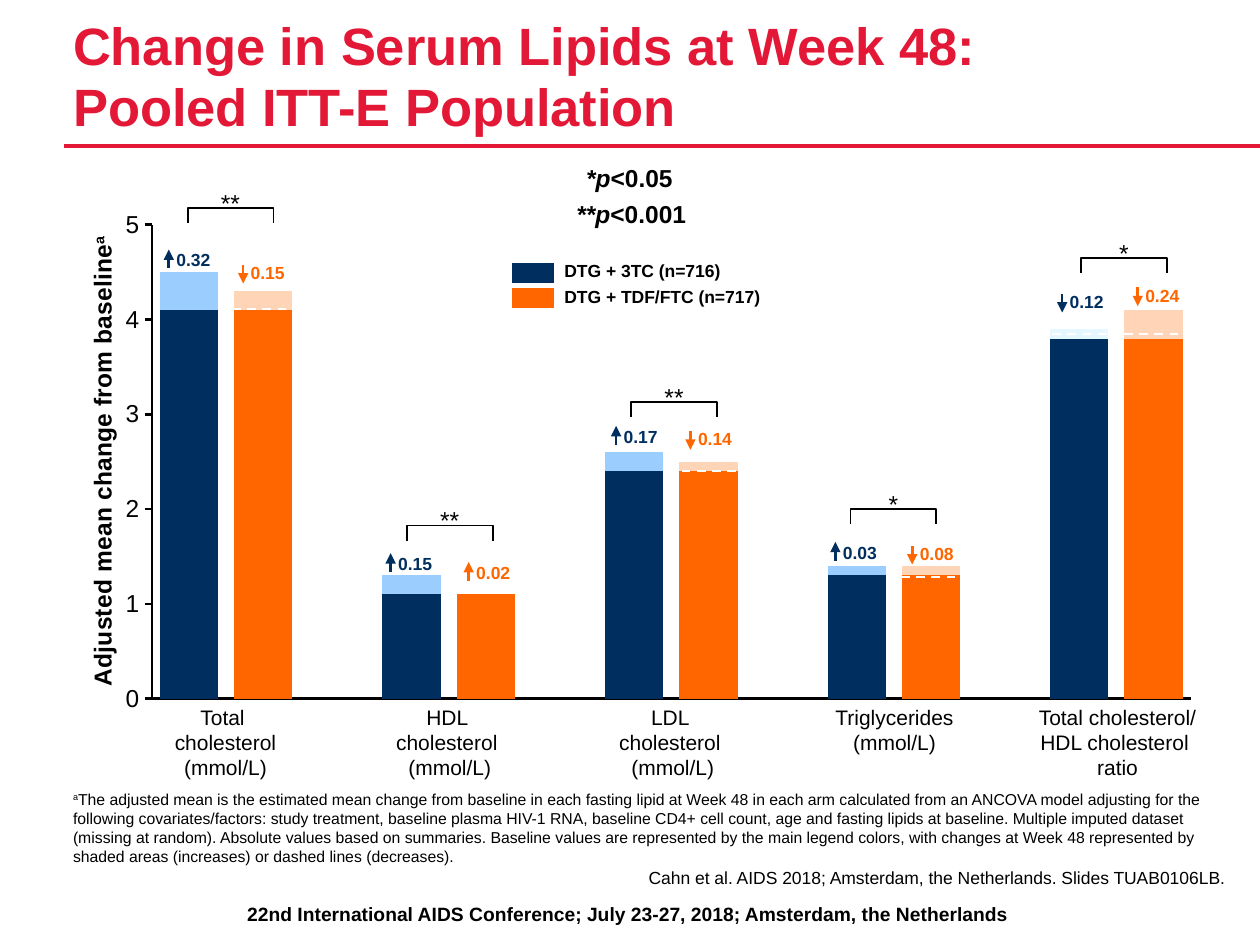
from lxml import etree
from pptx import Presentation
from pptx.chart.data import CategoryChartData
from pptx.dml.color import RGBColor
from pptx.enum import chart as ch, dml, shapes, text
from pptx.oxml import parse_xml
from pptx.oxml.ns import nsdecls, qn
from pptx.util import Inches, Pt

FONT = "Arial"
BLACK = RGBColor(0x00, 0x00, 0x00)
WHITE = RGBColor(0xFF, 0xFF, 0xFF)
RED = RGBColor(0xE3, 0x18, 0x36)
NAVY = RGBColor(0x00, 0x2F, 0x5F)
ORANGE = RGBColor(0xFF, 0x66, 0x00)
LIGHT_BLUE = RGBColor(0x9B, 0xCD, 0xFF)
PALE_BLUE = RGBColor(0xE5, 0xF7, 0xFF)
PEACH = RGBColor(0xFF, 0xD4, 0xB7)
LIGHT_ORANGE = RGBColor(0xFF, 0xB2, 0x7D)

UPPER = [4.5, 4.3, None, 1.3, 1.1, None, 2.6, 2.5, None, 1.4, 1.4, None, 3.9, 4.1]
LOWER = [4.1, 4.1, None, 1.1, 1.1, None, 2.4, 2.4, None, 1.3, 1.3, None, 3.8, 3.8]
UPPER_FILLS = {0: LIGHT_BLUE, 1: PEACH, 3: LIGHT_BLUE, 4: LIGHT_ORANGE, 6: LIGHT_BLUE,
               7: PEACH, 9: LIGHT_BLUE, 10: PEACH, 12: PALE_BLUE, 13: PEACH}
LOWER_FILLS = {bar: NAVY for bar in range(0, 14, 3)}

LIPIDS = [
    (1.79, ["Total ", "cholesterol", "(mmol/L)"]),
    (3.57, ["HDL ", "cholesterol ", "(mmol/L)"]),
    (5.34, ["LDL ", "cholesterol ", "(mmol/L)"]),
    (7.1, ["Triglycerides", "(mmol/L)"]),
    (8.87, ["Total cholesterol/", "HDL cholesterol ", "ratio"]),
]
CHANGES = [
    (1.34, 1.98, "0.32", NAVY, True), (1.93, 2.1, "0.15", ORANGE, False),
    (3.1, 4.39, "0.15", NAVY, True), (3.72, 4.46, "0.02", ORANGE, True),
    (4.89, 3.38, "0.17", NAVY, True), (5.48, 3.42, "0.14", ORANGE, False),
    (6.63, 4.3, "0.03", NAVY, True), (7.24, 4.33, "0.08", ORANGE, False),
    (8.43, 2.33, "0.12", NAVY, False), (9.03, 2.28, "0.24", ORANGE, False),
]
DASHES = [(1.84, 2.45), (5.41, 3.74), (7.15, 4.58), (8.35, 2.65), (8.92, 2.65)]
BRACKETS = [(1.83, 1.71, "**"), (3.57, 4.23, "**"), (5.35, 3.25, "**"),
            (7.09, 4.1, "*"), (8.92, 2.11, "*")]
FOOTNOTE = (
    "The adjusted mean is the estimated mean change from baseline in each fasting lipid at "
    "Week 48 in each arm calculated from an ANCOVA model adjusting for the following "
    "covariates/factors: study treatment, baseline plasma HIV-1 RNA, baseline CD4+ cell count, "
    "age and fasting lipids at baseline. Multiple imputed dataset (missing at random). Absolute "
    "values based on summaries. Baseline values are represented by the main legend colors, with "
    "changes at Week 48 represented by shaded areas (increases) or dashed lines (decreases).")


def style_font(font, size, color=BLACK, bold=False):
    """Set the face, size, colour and weight of a font."""
    font.name, font.size, font.bold = FONT, Pt(size), bold
    font.color.rgb = color


def add_run(para, words, raised=False, italic=None):
    """Append a run, raised as superscript or italic on request."""
    span = para.add_run()
    span.text = words
    span.font.italic = italic
    if raised:
        span._r.get_or_add_rPr().set("baseline", "30000")


def clear_margins(frame):
    """Remove the insets of a text frame."""
    frame.margin_left = frame.margin_top = frame.margin_right = frame.margin_bottom = 0


def add_text(page, box, lines, size, align=text.PP_ALIGN.LEFT, color=BLACK, bold=False):
    """Add a wrapped text box with one paragraph per line and return its frame."""
    frame = page.shapes.add_textbox(*map(Inches, box)).text_frame
    frame.word_wrap = True
    clear_margins(frame)
    for index, line in enumerate(lines):
        para = frame.add_paragraph() if index else frame.paragraphs[0]
        para.text = line
        para.alignment = align
        style_font(para.font, size, color, bold)
    return frame


def add_line(page, start, end, color, width):
    """Add a straight connector without shadow."""
    line = page.shapes.add_connector(
        shapes.MSO_CONNECTOR.STRAIGHT, *map(Inches, (*start, *end)))
    line.line.color.rgb = color
    line.line.width = Pt(width)
    etree.SubElement(line._element.spPr, qn("a:effectLst"))
    return line


def add_title(page, box):
    """Place and format the title with the rule below it."""
    title = page.shapes.title
    title.left, title.top, title.width, title.height = map(Inches, box)
    frame = title.text_frame
    frame.text = "Change in Serum Lipids at Week 48: Pooled ITT-E Population"
    frame.word_wrap = True
    frame.auto_size = text.MSO_AUTO_SIZE.NONE
    frame.vertical_anchor = text.MSO_ANCHOR.BOTTOM
    clear_margins(frame)
    para = frame.paragraphs[0]
    para.alignment = text.PP_ALIGN.LEFT
    para.line_spacing = Pt(35)
    style_font(para.font, 30, RED, True)
    add_line(page, (0.51, 1.16), (10, 1.16), RED, 2)


def make_layout(**parts):
    """Return a manual chart layout with the given parts."""
    sides = "".join(f'<c:{tag} val="{value}"/>' for tag, value in parts.items())
    return parse_xml(
        f'<c:layout {nsdecls("c")}><c:manualLayout>{sides}</c:manualLayout></c:layout>')


def add_lipid_chart(page, box):
    """Add the overlapping columns of baseline and Week 48 values."""
    data = CategoryChartData()
    data.categories = [str(number) for number in range(1, 15)]
    data.add_series("Series 1", UPPER)
    data.add_series("Series 2", LOWER)
    chart = page.shapes.add_chart(
        ch.XL_CHART_TYPE.COLUMN_CLUSTERED, *map(Inches, box), data).chart
    chart.has_legend = chart.has_title = False
    style_font(chart.font, 18)
    plot = chart.plots[0]
    plot.gap_width, plot.overlap, plot.vary_by_categories = 27, 100, False
    for series, color, fills in zip(plot.series, (NAVY, ORANGE), (UPPER_FILLS, LOWER_FILLS)):
        series.invert_if_negative = False
        series.format.fill.solid()
        series.format.fill.fore_color.rgb = color
        for bar, shade in fills.items():
            fill = series.points[bar].format.fill
            fill.solid()
            fill.fore_color.rgb = shade

    for axis in (chart.category_axis, chart.value_axis):
        axis.has_major_gridlines = False
        axis.format.line.color.rgb = BLACK
        axis.format.line.width = Pt(1.5)
        style_font(axis.tick_labels.font, 14)
    chart.category_axis.tick_label_position = ch.XL_TICK_LABEL_POSITION.NONE
    chart.category_axis.major_tick_mark = ch.XL_TICK_MARK.NONE
    values = chart.value_axis
    values.minimum_scale, values.maximum_scale, values.major_unit = 0, 5, 1
    values.major_tick_mark = ch.XL_TICK_MARK.OUTSIDE
    para = values.axis_title.text_frame.paragraphs[0]
    add_run(para, "Adjusted mean change from baseline")
    add_run(para, "a", raised=True)
    style_font(para.font, 14, bold=True)

    title = values.axis_title._element
    area = chart._chartSpace.chart.plotArea
    for parent in (title, area):
        for old in parent.findall(qn("c:layout")):
            parent.remove(old)
    title.find(qn("c:tx")).addnext(make_layout(xMode="edge", yMode="edge", x=0.02, y=0.07))
    area.insert(0, make_layout(layoutTarget="inner", xMode="edge", yMode="edge",
                               x=0.081, y=0.059, w=0.919, h=0.684))


def add_legend(page, box):
    """Add the two-arm legend as a table with white borders."""
    arms = [(NAVY, "DTG + 3TC (n=716)"), (ORANGE, "DTG + TDF/FTC (n=717)")]
    table = page.shapes.add_table(2, 2, *map(Inches, box)).table
    table.first_row = table.horz_banding = False
    table.columns[0].width, table.columns[1].width = Inches(0.34), Inches(box[2] - 0.34)
    for row, (color, label) in enumerate(arms):
        for column, (fill, words) in enumerate(((color, ""), (WHITE, label))):
            cell = table.cell(row, column)
            clear_margins(cell)
            cell.margin_left = Inches(0.08 * column)
            cell.margin_top = Inches(0.02 * row * column)
            for side in "LRTB":
                thick = (row, side) in ((0, "B"), (1, "T"))
                cell._tc.get_or_add_tcPr().append(parse_xml(
                    f'<a:ln{side} {nsdecls("a")} w="{Pt(3 if thick else 1)}"><a:solidFill>'
                    f'<a:srgbClr val="{WHITE}"/></a:solidFill></a:ln{side}>'))
            cell.fill.solid()
            cell.fill.fore_color.rgb = fill
            para = cell.text_frame.paragraphs[0]
            para.text = words
            style_font(para.font, 10, bold=True)
            if not words:
                etree.SubElement(para._p, qn("a:endParaRPr")).set("sz", "1000")


def add_change(page, x, y, value, color, rises):
    """Add an arrow at x, y with the size of the change beside it."""
    ends = [(x, y), (x, y + 0.15)]
    arrow = add_line(page, *(reversed(ends) if rises else ends), color, 1.5)
    etree.SubElement(arrow.line._get_or_add_ln(), qn("a:tailEnd")).set("type", "triangle")
    top = y if rises else y - 0.02
    add_text(page, (x + 0.06, top, 0.4, 0.17), [value], 10, color=color, bold=True)


def add_bracket(page, x, y, stars):
    """Add a significance bracket centred on x, y with stars above."""
    bracket = page.shapes.add_shape(
        shapes.MSO_SHAPE.LEFT_BRACKET, *map(Inches, (x - 0.06, y - 0.34, 0.12, 0.68)))
    bracket.rotation = 90
    bracket.adjustments[0] = 0
    bracket.shadow.inherit = False
    bracket.fill.background()
    bracket.line.color.rgb = BLACK
    bracket.line.width = Pt(1)
    add_text(page, (x - 0.1, y - 0.22, 0.2, 0.24), [stars], 14, text.PP_ALIGN.CENTER)


def add_p_value(page, box, stars, limit):
    """Add one line of the significance key."""
    frame = add_text(page, box, [""], 14, text.PP_ALIGN.CENTER, bold=True)
    frame.word_wrap = False
    add_run(frame.paragraphs[0], stars + "p", italic=True)
    add_run(frame.paragraphs[0], limit)


def add_notes(page, left, width):
    """Add the footnote, the citation and the conference line."""
    frame = add_text(page, (left, 6.47, width, 0.4), [""], 9)
    frame.vertical_anchor = text.MSO_ANCHOR.BOTTOM
    para = frame.paragraphs[0]
    para.space_after = Pt(3)
    add_run(para, "a", raised=True)
    add_run(para, FOOTNOTE)
    add_text(page, (left, 6.88, width, 0.2),
             ["Cahn et al. AIDS 2018; Amsterdam, the Netherlands. Slides TUAB0106LB."],
             10, text.PP_ALIGN.RIGHT)
    add_text(page, (0.06, 7.16, 9.85, 0.19),
             ["22nd International AIDS Conference; July 23-27, 2018; Amsterdam, the Netherlands"],
             11, text.PP_ALIGN.CENTER, bold=True)


def main():
    """Build the slide and save the deck."""
    deck = Presentation()
    deck.slide_width, deck.slide_height = Inches(10), Inches(7.5)
    page = deck.slides.add_slide(deck.slide_layouts[5])
    add_title(page, (0.58, 0.17, 8.25, 0.92))
    add_lipid_chart(page, (0.48, 1.46, 8.98, 5.5))
    for center, lines in LIPIDS:
        add_text(page, (center - 0.8, 5.59, 1.6, 0.61), lines, 12, text.PP_ALIGN.CENTER)
    add_legend(page, (4.06, 2.08, 2.16, 0.37))
    for change in CHANGES:
        add_change(page, *change)
    for x, y in DASHES:
        dash = add_line(page, (x, y), (x + 0.5, y), WHITE, 1.25)
        dash.line.dash_style = dml.MSO_LINE.DASH
    for bracket in BRACKETS:
        add_bracket(page, *bracket)
    add_p_value(page, (4.65, 1.29, 0.69, 0.24), "*", "<0.05")
    add_p_value(page, (4.57, 1.58, 0.88, 0.24), "**", "<0.001")
    add_notes(page, 0.58, 9.14)
    deck.save("out.pptx")


if __name__ == "__main__":
    main()
